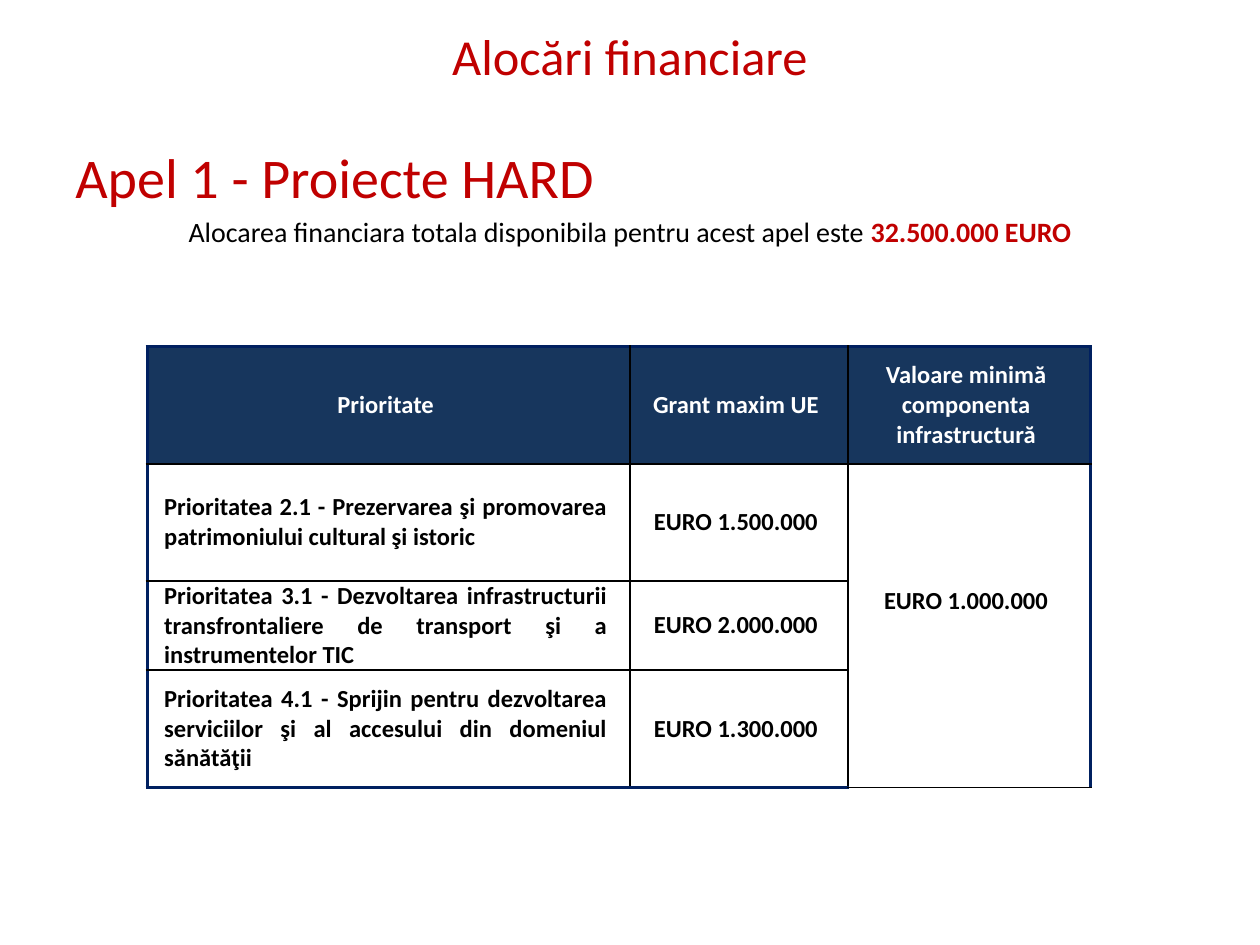
from dataclasses import dataclass

import lxml.etree
import pptx
import pptx.dml.color
import pptx.enum.text
import pptx.oxml.ns
import pptx.util

Cm = pptx.util.Cm
Pt = pptx.util.Pt
Align = pptx.enum.text.PP_ALIGN
Anchor = pptx.enum.text.MSO_ANCHOR


@dataclass(frozen=True)
class Theme:
    font: str = "Calibri"
    accent: str = "C00000"
    ink: str = "000000"
    paper: str = "FFFFFF"
    header: str = "17365D"
    frame: str = "002060"
    title_size: float = 28.8
    heading_size: float = 32
    lead_size: float = 16
    table_size: float = 14
    frame_width: float = 2.25
    grid_width: float = 1


THEME = Theme()

COLUMN_WIDTHS = (9.73, 4.39, 4.89)
ROW_HEIGHTS = (2.36, 2.36, 1.8, 2.36)
HEADERS = ("Prioritate", "Grant maxim UE", "Valoare minimă componenta infrastructură")
PRIORITIES = (
    ("Prioritatea 2.1 - Prezervarea şi promovarea patrimoniului cultural şi istoric",
     "EURO 1.500.000"),
    ("Prioritatea 3.1 - Dezvoltarea infrastructurii transfrontaliere de transport şi a "
     "instrumentelor TIC", "EURO 2.000.000"),
    ("Prioritatea 4.1 - Sprijin pentru dezvoltarea serviciilor şi al accesului din "
     "domeniul sănătăţii", "EURO 1.300.000"),
)
MINIMUM_VALUE = "EURO 1.000.000"


def rgb(value):
    return pptx.dml.color.RGBColor.from_string(value)


def add_span(para, text, size, color, bold=False):
    span = para.add_run()
    span.text = text
    span.font.name = THEME.font
    span.font.size = Pt(size)
    span.font.bold = bold
    span.font.color.rgb = rgb(color)


def add_title(page, text):
    title = page.shapes.title
    title.left, title.top, title.width, title.height = Cm(1.27), Cm(0.76), Cm(22.86), Cm(0.71)
    title.text_frame.vertical_anchor = Anchor.MIDDLE
    para = title.text_frame.paragraphs[0]
    para.alignment = Align.CENTER
    add_span(para, text, THEME.title_size, THEME.accent)


def add_introduction(page):
    box = page.shapes.add_textbox(Cm(1.27), Cm(2.74), Cm(22.86), Cm(3))
    frame = box.text_frame
    frame.word_wrap = True
    add_span(frame.paragraphs[0], "Apel 1 - Proiecte HARD", THEME.heading_size, THEME.accent)
    para = frame.add_paragraph()
    para.alignment = Align.CENTER
    para.space_before = Pt(3.2)
    add_span(para, "Alocarea financiara totala disponibila pentru acest apel este ",
             THEME.lead_size, THEME.ink)
    add_span(para, "32.500.000 EURO", THEME.lead_size, THEME.accent, bold=True)


def set_borders(cell, outer_sides):
    """Draw the thick frame on the outer sides and the thin grid on the others."""
    properties = cell._tc.get_or_add_tcPr()
    for index, side in enumerate("LRTB"):
        outer = side in outer_sides
        width = THEME.frame_width if outer else THEME.grid_width
        line = lxml.etree.Element(pptx.oxml.ns.qn(f"a:ln{side}"), w=str(int(Pt(width))))
        fill = lxml.etree.SubElement(line, pptx.oxml.ns.qn("a:solidFill"))
        lxml.etree.SubElement(fill, pptx.oxml.ns.qn("a:srgbClr"),
                              val=THEME.frame if outer else THEME.ink)
        properties.insert(index, line)


def format_cell(cell, row, column):
    cell.fill.solid()
    cell.fill.fore_color.rgb = rgb(THEME.paper if row else THEME.header)
    cell.vertical_anchor = Anchor.MIDDLE
    cell.margin_left, cell.margin_right = Cm(0.34), Cm(0.46)
    cell.margin_top = cell.margin_bottom = 0
    edges = {
        "L": column == 0,
        "R": column == len(COLUMN_WIDTHS) - 1,
        "T": row == 0,
        "B": row == len(ROW_HEIGHTS) - 1,
    }
    set_borders(cell, [side for side, outer in edges.items() if outer])


def write_cell(cell, text, color, alignment=Align.CENTER):
    para = cell.text_frame.paragraphs[0]
    para.alignment = alignment
    add_span(para, text, THEME.table_size, color, bold=True)


def add_priority_table(page):
    frame = page.shapes.add_table(len(ROW_HEIGHTS), len(COLUMN_WIDTHS), Cm(2.97), Cm(6.99),
                                  Cm(sum(COLUMN_WIDTHS)), Cm(sum(ROW_HEIGHTS)))
    table = frame.table
    for column, width in zip(table.columns, COLUMN_WIDTHS):
        column.width = Cm(width)
    for row, height in zip(table.rows, ROW_HEIGHTS):
        row.height = Cm(height)
    for row in range(len(ROW_HEIGHTS)):
        for column in range(len(COLUMN_WIDTHS)):
            format_cell(table.cell(row, column), row, column)

    for column, text in enumerate(HEADERS):
        write_cell(table.cell(0, column), text, THEME.paper)
    for row, (priority, grant) in enumerate(PRIORITIES, start=1):
        write_cell(table.cell(row, 0), priority, THEME.ink, Align.JUSTIFY)
        write_cell(table.cell(row, 1), grant, THEME.ink)

    minimum = table.cell(1, 2)
    minimum.merge(table.cell(len(PRIORITIES), 2))
    minimum.margin_bottom = Cm(1)
    write_cell(minimum, MINIMUM_VALUE, THEME.ink)


def main():
    deck = pptx.Presentation()
    deck.slide_width, deck.slide_height = Cm(25.4), Cm(19.05)
    page = deck.slides.add_slide(deck.slide_layouts.get_by_name("Title Only"))
    add_title(page, "Alocări financiare")
    add_introduction(page)
    add_priority_table(page)
    deck.save("out.pptx")


if __name__ == "__main__":
    main()
